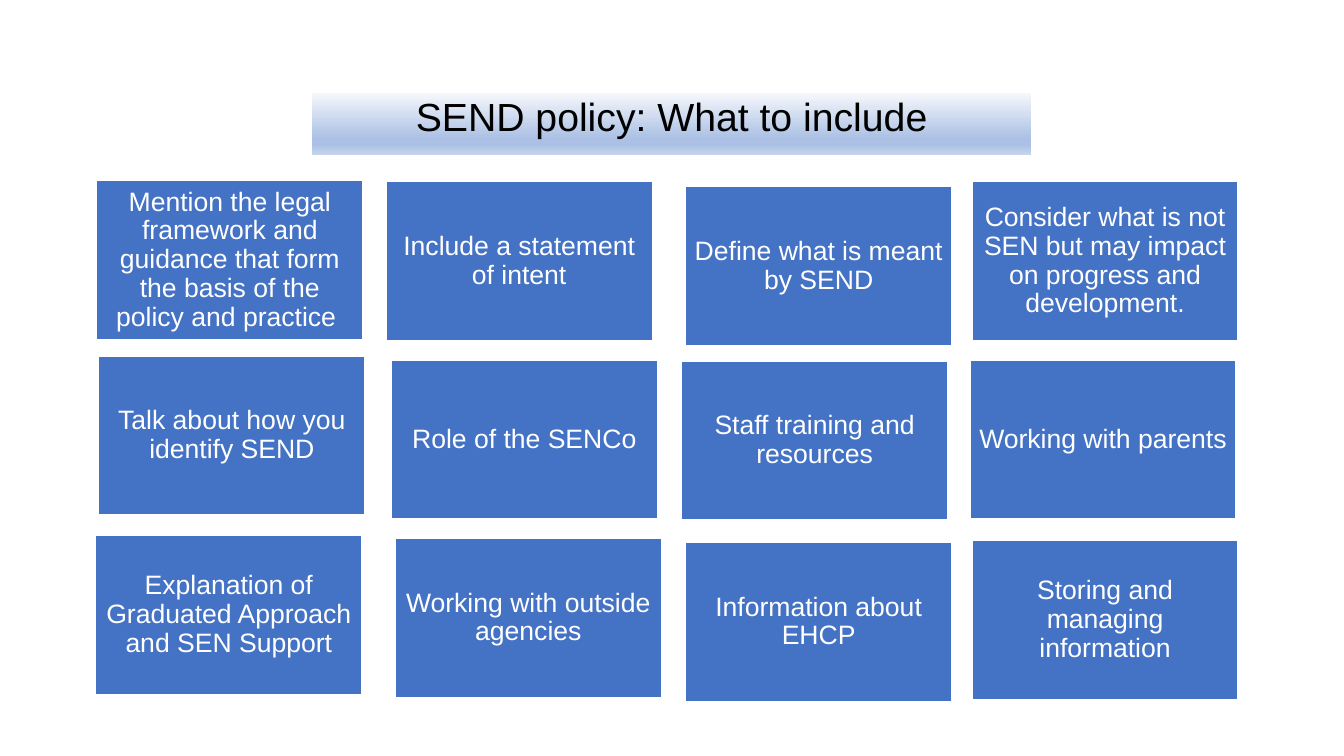
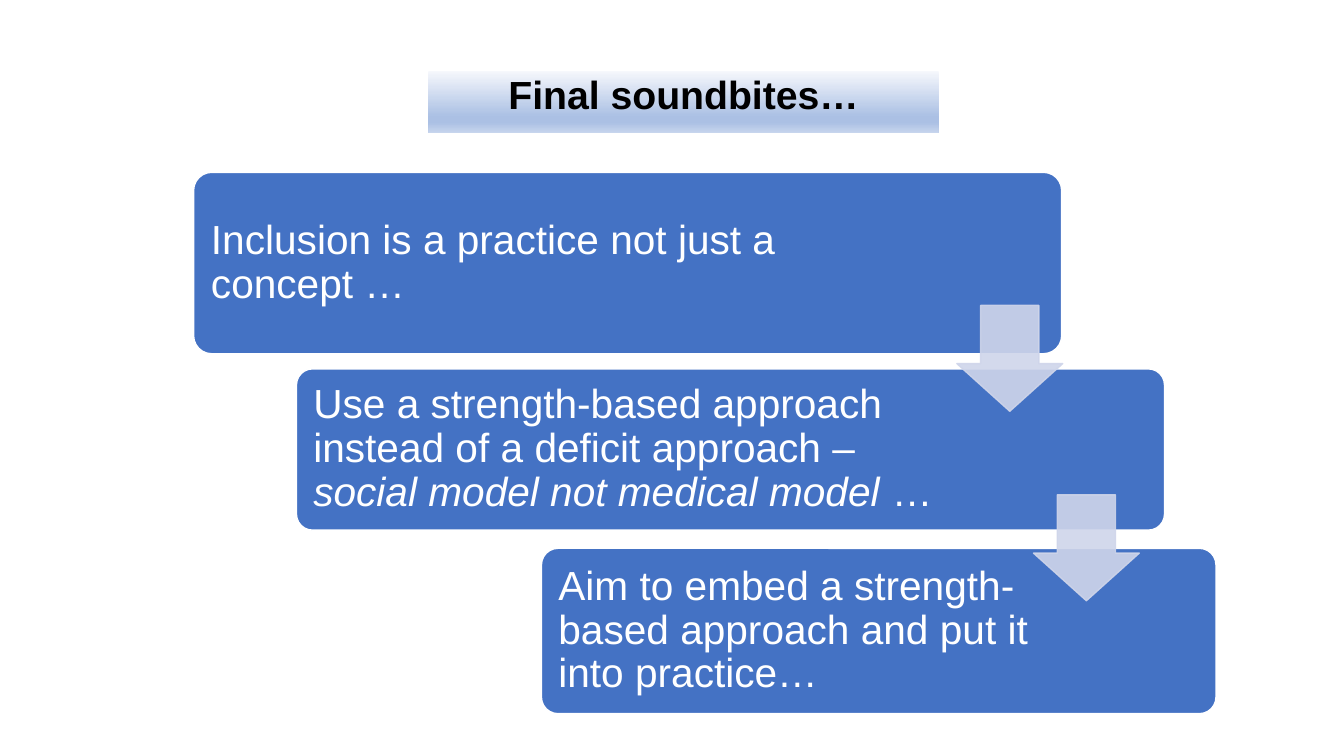
"""Build two slides on SEND policy: a grid of contents and a staircase of closing messages."""
import pptx
import pptx.dml.color
import pptx.enum.shapes
import pptx.enum.text
import pptx.oxml
import pptx.oxml.ns
import pptx.util

RGBColor = pptx.dml.color.RGBColor
Inches = pptx.util.Inches
SHAPE = pptx.enum.shapes.MSO_SHAPE
ALIGN = pptx.enum.text.PP_ALIGN
ANCHOR = pptx.enum.text.MSO_ANCHOR

BLUE = RGBColor(0x44, 0x72, 0xC4)
PALE_BLUE = RGBColor(0xCF, 0xD5, 0xEA)
WHITE = RGBColor(0xFF, 0xFF, 0xFF)
BLACK = RGBColor(0x00, 0x00, 0x00)
BANNER_STOPS = [
    (0, RGBColor(0xF6, 0xF8, 0xFC)),
    (74, RGBColor(0xAB, 0xC0, 0xE4)),
    (83, RGBColor(0xAB, 0xC0, 0xE4)),
    (100, RGBColor(0xC7, 0xD5, 0xED)),
]
FONT = "Arial"


def add_block(slide, preset, left, top, width, height, color):
    block = slide.shapes.add_shape(
        preset, Inches(left), Inches(top), Inches(width), Inches(height))
    block.shadow.inherit = False
    block.fill.solid()
    block.fill.fore_color.rgb = color
    block.line.color.rgb = WHITE
    block.line.width = pptx.util.Pt(1)
    return block


def write_text(block, pieces, size, color, align, anchor, margins):
    frame = block.text_frame
    frame.word_wrap = True
    frame.vertical_anchor = anchor
    frame.margin_left, frame.margin_top, frame.margin_right, frame.margin_bottom = map(
        Inches, margins)
    paragraph = frame.paragraphs[0]
    paragraph.alignment = align
    paragraph.line_spacing = 0.9
    for piece in pieces:
        run = paragraph.add_run()
        run.text = piece
        run.font.name = FONT
        run.font.size = pptx.util.Pt(size)
        run.font.color.rgb = color
    return paragraph.runs


deck = pptx.Presentation()
deck.slide_width = Inches(13.33)
deck.slide_height = Inches(7.5)
blank = deck.slide_layouts[6]
policy_slide = deck.slides.add_slide(blank)
closing_slide = deck.slides.add_slide(blank)

# Each topic holds its text and its offset from the regular grid.
TOPICS = [
    [("Mention the legal framework and guidance that form the basis of the policy and practice ",
      0, -0.01),
     ("Include a statement of intent", -0.02, 0),
     ("Define what is meant by SEND", 0.06, 0.05),
     ("Consider what is not SEN but may impact on progress and development.", 0.01, 0)],
    [("Talk about how you identify SEND", 0.02, -0.04),
     ("Role of the SENCo", 0.03, 0),
     ("Staff training and resources", 0.02, 0.01),
     ("Working with parents", -0.01, 0)],
    [("Explanation of Graduated Approach and SEN Support", -0.01, -0.03),
     ("Working with outside agencies", 0.07, 0),
     ("Information about EHCP", 0.06, 0.04),
     ("Storing and managing information", 0.01, 0.02)],
]
GRID_LEFT, GRID_TOP = 0.96, 1.8
COLUMN_STEP, ROW_STEP = 2.89, 1.77
for row, topics in enumerate(TOPICS):
    for column, (topic, shift_x, shift_y) in enumerate(topics):
        card = add_block(
            policy_slide, SHAPE.RECTANGLE,
            GRID_LEFT + column * COLUMN_STEP + shift_x,
            GRID_TOP + row * ROW_STEP + shift_y, 2.64, 1.58, BLUE)
        write_text(card, [topic], 19, WHITE, ALIGN.CENTER, ANCHOR.MIDDLE, [0.08] * 4)

MESSAGES = [
    (1.92, 1.71, 8.61, 1.8, 1.76, ["Inclusion is a practice not just a concept …"]),
    (2.94, 3.66, 8.61, 1.6, 1.93,
     ["Use a strength-based approach instead of a deficit approach – ",
      "social model not medical model ", "…"]),
    (5.37, 5.44, 6.69, 1.64, 1.53,
     ["Aim to embed a strength-based approach and put it into practice…"]),
]
for left, top, width, height, right_margin, pieces in MESSAGES:
    step = add_block(closing_slide, SHAPE.ROUNDED_RECTANGLE, left, top, width, height, BLUE)
    step.adjustments[0] = 0.1
    runs = write_text(step, pieces, 29, WHITE, ALIGN.LEFT, ANCHOR.MIDDLE,
                      [0.12, 0.12, right_margin, 0.12])
    for emphasis in runs[1:2]:
        emphasis.font.italic = True

for left, top in [(9.49, 3.03), (10.25, 4.91)]:
    arrow = add_block(closing_slide, SHAPE.DOWN_ARROW, left, top, 1.05, 1.05, PALE_BLUE)
    arrow.adjustments[0], arrow.adjustments[1] = 0.55, 0.45
    arrow.line.color.rgb = PALE_BLUE
    for tint in arrow.element.spPr.iter(pptx.oxml.ns.qn("a:srgbClr")):
        tint.append(pptx.oxml.parse_xml(
            f'<a:alpha {pptx.oxml.ns.nsdecls("a")} val="90000"/>'))

for slide, title, left, top, width, bold in [
        (policy_slide, "SEND policy: What to include", 3.09, 0.92, 7.14, False),
        (closing_slide, "Final soundbites…", 4.25, 0.7, 5.06, True)]:
    banner = add_block(slide, SHAPE.RECTANGLE, left, top, width, 0.62, WHITE)
    banner.line.fill.background()
    banner.fill.gradient()
    banner.fill.gradient_angle = 270
    stops = banner.element.spPr.find(".//" + pptx.oxml.ns.qn("a:gsLst"))
    stops.clear()
    for position, color in BANNER_STOPS:
        stops.append(pptx.oxml.parse_xml(
            f'<a:gs {pptx.oxml.ns.nsdecls("a")} pos="{position * 1000}">'
            f'<a:srgbClr val="{color}"/></a:gs>'))
    heading = write_text(banner, [title], 28, BLACK, ALIGN.CENTER, ANCHOR.TOP,
                         [0.1, 0.05, 0.1, 0.05])
    heading[0].font.bold = bold

deck.save("out.pptx")
